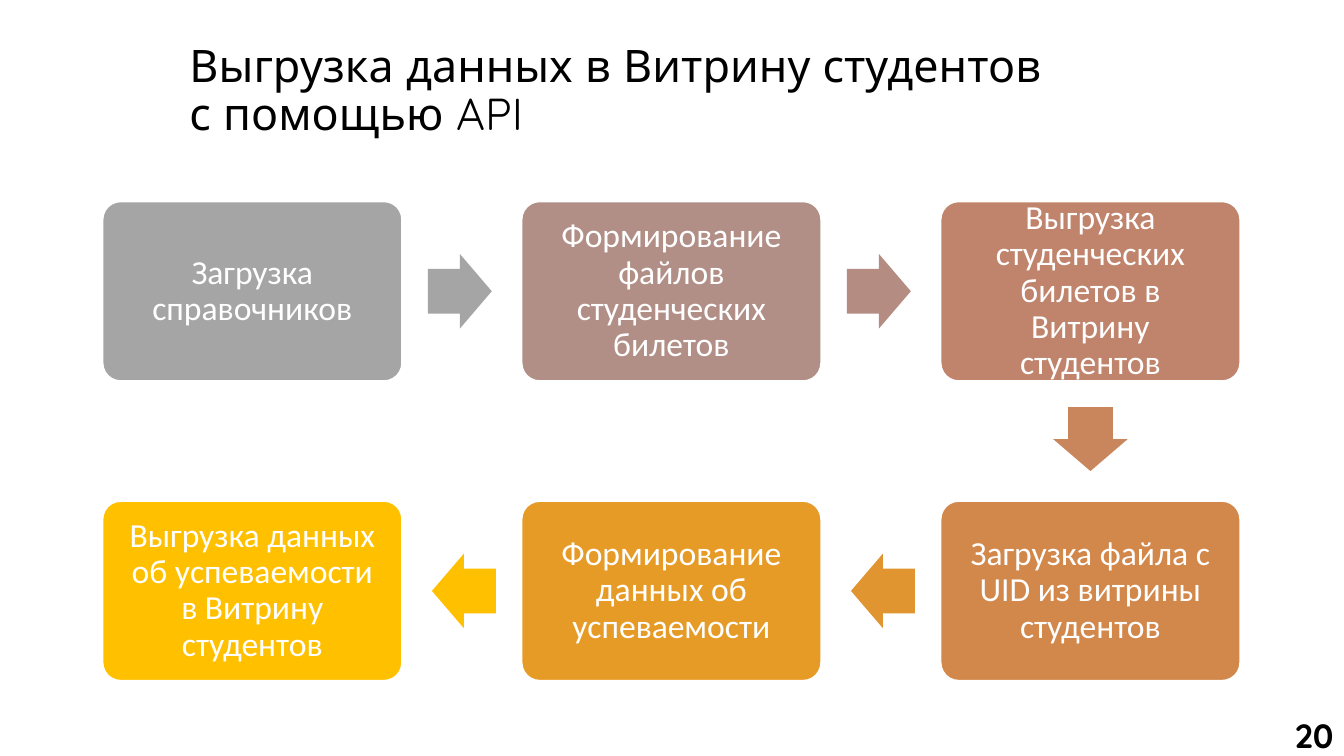
from dataclasses import dataclass

from pptx import Presentation
from pptx.dml.color import RGBColor
from pptx.enum.shapes import MSO_SHAPE
from pptx.enum.text import MSO_ANCHOR, MSO_AUTO_SIZE, PP_ALIGN
from pptx.util import Cm, Pt


@dataclass(frozen=True)
class Theme:
    heading: str = "Quicksand"
    body: str = "Calibri"
    title_size: int = 32
    body_size: int = 24
    black: str = "000000"
    white: str = "FFFFFF"
    steps: tuple = ("A5A5A5", "B18F87", "C0846C", "D2874B", "E79B27", "FFC000")
    arrows: tuple = ("A5A5A5", "B48C82", "C9865C", "E19530", "FFC000")


theme = Theme()


def write(tf, text, font=theme.body, size=theme.body_size, color=theme.black,
          bold=False, align=PP_ALIGN.LEFT, anchor=MSO_ANCHOR.MIDDLE,
          spacing=0.9, inset=None):
    tf.word_wrap = True
    tf.auto_size = MSO_AUTO_SIZE.NONE
    tf.vertical_anchor = anchor
    if inset is not None:
        tf.margin_left = tf.margin_right = inset
        tf.margin_top = tf.margin_bottom = inset
    p = tf.paragraphs[0]
    p.text = text
    p.alignment = align
    p.line_spacing = spacing
    for r in p.runs:
        r.font.name = font
        r.font.size = Pt(size)
        r.font.bold = bold
        r.font.color.rgb = RGBColor.from_string(color)


def add_block(kind, left, top, width, height, fill):
    sp = s.shapes.add_shape(kind, Cm(left), Cm(top), Cm(width), Cm(height))
    sp.shadow.inherit = False
    sp.fill.solid()
    sp.fill.fore_color.rgb = RGBColor.from_string(fill)
    sp.line.fill.background()
    return sp


prs = Presentation()
prs.slide_width, prs.slide_height = Cm(33.87), Cm(19.05)
s = prs.slides.add_slide(prs.slide_layouts[5])

title = s.shapes.title
title.left, title.top, title.width, title.height = Cm(4.52), Cm(0.48), Cm(27), Cm(3.68)
write(title.text_frame, "Выгрузка данных в Витрину студентов\vс помощью API",
      font=theme.heading, size=theme.title_size)

steps = [
    ("Загрузка справочников", 0, 0),
    ("Формирование файлов студенческих билетов", 1, 0),
    ("Выгрузка студенческих билетов в Витрину студентов", 2, 0),
    ("Загрузка файла с UID из витрины студентов", 2, 1),
    ("Формирование данных об успеваемости", 1, 1),
    ("Выгрузка данных об успеваемости в Витрину студентов", 0, 1),
]
left, top = 2.59, 5.08
box_w, box_h = 7.54, 4.52
step_x, step_y = 10.56, 7.55
arrow_w, arrow_h, arrow_shift = 1.61, 1.88, 0.05

for (text, col, row), fill in zip(steps, theme.steps):
    sp = add_block(MSO_SHAPE.ROUNDED_RECTANGLE, left + col * step_x,
                   top + row * step_y, box_w, box_h, fill)
    sp.adjustments[0] = 0.1
    sp.line.color.rgb = RGBColor.from_string(theme.white)
    sp.line.width = Pt(1)
    write(sp.text_frame, text, color=theme.white, align=PP_ALIGN.CENTER, inset=Cm(0.38))

for (_, col, row), (_, next_col, next_row), fill in zip(steps, steps[1:], theme.arrows):
    dx, dy = next_col - col, next_row - row
    x = left + box_w / 2 + (col + next_col) / 2 * step_x - dx * arrow_shift
    y = top + box_h / 2 + (row + next_row) / 2 * step_y - dy * arrow_shift
    sp = add_block(MSO_SHAPE.RIGHT_ARROW, x - arrow_w / 2, y - arrow_h / 2,
                   arrow_w, arrow_h, fill)
    sp.adjustments[0] = 0.6
    sp.adjustments[1] = 0.5
    sp.rotation = 90 if dy else 90 * (1 - dx)

number = s.shapes.add_textbox(Cm(31.19), Cm(17.88), Cm(2.67), Cm(1.28))
write(number.text_frame, "20", font=theme.heading, bold=True,
      align=PP_ALIGN.RIGHT, anchor=MSO_ANCHOR.TOP, spacing=1.0)

prs.save("out.pptx")
